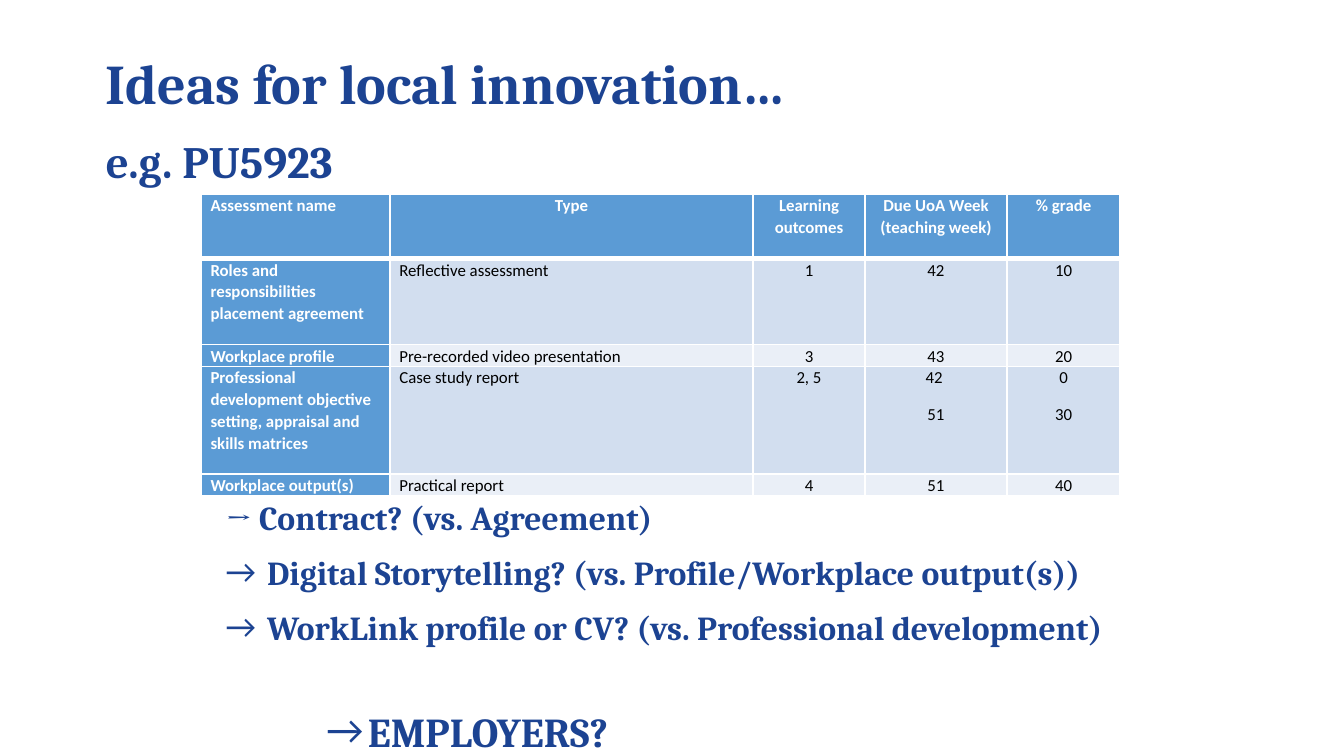
"""Build a slide on assessment ideas: headings, an assessment table and suggestions."""
from lxml.etree import SubElement
from pptx import Presentation
from pptx.dml.color import RGBColor
from pptx.enum.text import MSO_ANCHOR, PP_ALIGN
from pptx.oxml.ns import qn
from pptx.util import Inches, Pt

NAVY, BLUE, WHITE, BLACK = "1C4392", "5B9BD5", "FFFFFF", "000000"
BANDS = ["D2DEEF", "EAEFF7"]

deck = Presentation()
deck.slide_width = Inches(10)
deck.slide_height = deck.slide_width * 9 // 16
page = deck.slides.add_slide(deck.slide_layouts[6])
step = deck.slide_width / 100


def grid(*counts):
    return [round(count * step) for count in counts]


def write(para, text, font, size, color, bold=True):
    span = para.add_run()
    span.text = text
    span.font.name, span.font.size, span.font.bold = font, Pt(size), bold
    span.font.color.rgb = RGBColor.from_string(color)


headings = [
    ("Ideas for local innovation…", 30, 3, 6.9, MSO_ANCHOR.MIDDLE),
    ("e.g. PU5923", 24, 9.9, 6.3, MSO_ANCHOR.TOP),
]
for text, size, top, height, anchor in headings:
    box = page.shapes.add_textbox(*grid(6.9, top, 84.6, height))
    box.text_frame.word_wrap = True
    box.text_frame.vertical_anchor = anchor
    para = box.text_frame.paragraphs[0]
    para.line_spacing = 0.9
    write(para, text, "Cambria", size, NAVY)
    if anchor == MSO_ANCHOR.MIDDLE:
        box.fill.solid()
        box.fill.fore_color.rgb = RGBColor.from_string(WHITE)

suggestions = [
    ("→ Contract? (vs. Agreement)", 18, 0, 0.9, 0),
    ("Digital Storytelling? (vs. Profile/Workplace output(s))", 18, 3.1, 0.9, 10),
    ("WorkLink profile or CV? (vs. Professional development)", 18, 3.1, 0.9, 10),
    ("EMPLOYERS?", 22, 10.6, 2.0, 5),
]
box = page.shapes.add_textbox(*grid(15.8, 36.8, 68.4, 31.9))
box.text_frame.word_wrap = True
for index, (text, size, indent, spacing, before) in enumerate(suggestions):
    para = box.text_frame.add_paragraph() if index else box.text_frame.paragraphs[0]
    para.line_spacing, para.space_before = spacing, Pt(before)
    if indent:
        margin, hang = grid(indent, -3.1)
        para.level = 1 if indent > 10 else 0
        properties = para._p.get_or_add_pPr()
        properties.set("marL", str(margin))
        properties.set("indent", str(hang))
        SubElement(properties, qn("a:buFont"), typeface="Calibri")
        SubElement(properties, qn("a:buChar"), char="→")
    write(para, text, "Cambria", size, NAVY)

records = [
    ["Assessment name", "Type", "Learning outcomes", "Due UoA Week (teaching week)", "% grade"],
    ["Roles and responsibilities placement agreement", "Reflective assessment", "1", "42", "10"],
    ["Workplace profile", "Pre-recorded video presentation", "3", "43", "20"],
    ["Professional development objective setting, appraisal and skills matrices",
     "Case study report", "2, 5", "42 \n51", "0\n30"],
    ["Workplace output(s)", "Practical report", "4", "51", "40"],
]
table = page.shapes.add_table(5, 5, *grid(14.95, 14.45, 68.4, 22.3)).table
for column, width in zip(table.columns, grid(14.05, 27.05, 8.3, 10.6, 8.4)):
    column.width = width
for row, height in zip(table.rows, grid(4.8, 6.4, 1.5, 8, 1.5)):
    row.height = height

for row, record in enumerate(records):
    for column, content in enumerate(record):
        cell = table.cell(row, column)
        heading = row == 0 or column == 0
        cell.margin_left, cell.margin_right = grid(0.72, 0.72)
        cell.margin_top = cell.margin_bottom = 0
        for index, text in enumerate(content.split("\n")):
            para = cell.text_frame.add_paragraph() if index else cell.text_frame.paragraphs[0]
            para.line_spacing, para.space_after = 1.07, Pt(8)
            centred = column > 1 or (row == 0 and column == 1)
            para.alignment = PP_ALIGN.CENTER if centred else PP_ALIGN.LEFT
            write(para, text, "Calibri", 9, WHITE if heading else BLACK, heading)
        properties = cell._tc.get_or_add_tcPr()
        for side in "LRTB":
            thick = (row == 0 and side == "B") or (row == 1 and side == "T")
            border = SubElement(properties, qn(f"a:ln{side}"), w=str(Pt(3 if thick else 1)))
            SubElement(SubElement(border, qn("a:solidFill")), qn("a:srgbClr"), val=WHITE)
        cell.fill.solid()
        cell.fill.fore_color.rgb = RGBColor.from_string(BLUE if heading else BANDS[(row - 1) % 2])

deck.save("out.pptx")
